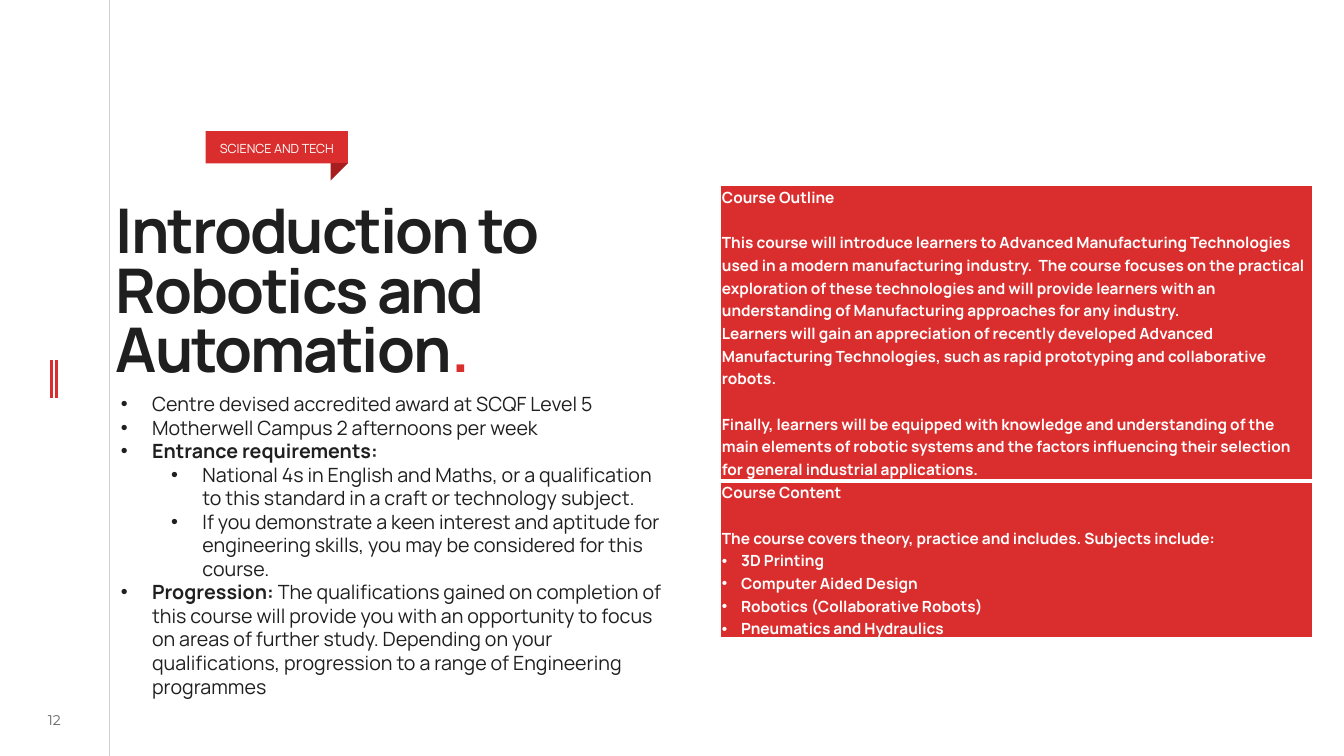
from dataclasses import dataclass

from lxml.etree import SubElement
from pptx import Presentation
from pptx.dml.color import RGBColor
from pptx.enum.shapes import MSO_CONNECTOR, MSO_SHAPE
from pptx.enum.text import MSO_ANCHOR, MSO_AUTO_SIZE, PP_ALIGN
from pptx.oxml import parse_xml
from pptx.oxml.ns import nsdecls, qn
from pptx.util import Inches, Pt

COLORS = {"ink": "1F1F1F", "red": "DA2E2E", "dot": "DB2E2E", "fold": "A81E1E",
          "white": "FFFFFF", "rule": "D2D2D2", "number": "626262"}
FONT = "Manrope"


@dataclass
class Span:
    text: str
    bold: bool = False


@dataclass
class Para:
    spans: list[Span]
    indent: float = 0
    hanging: float = 0
    gap: float = 0


@dataclass
class Rule:
    x: float
    top: float
    bottom: float
    color: str
    width: float


RULES = [Rule(1.08, 0, 7.5, "rule", 0.5),
         Rule(0.51, 3.57, 3.95, "red", 2),
         Rule(0.56, 3.57, 3.95, "red", 2)]


def bullet(*spans: Span, indent: float = 0.31, hanging: float = 0.31) -> Para:
    return Para(list(spans), indent, hanging)


def topic(text: str) -> Para:
    return bullet(Span(text, True), indent=0.19, hanging=0.19)


def plain(text: str, gap: float = 0) -> Para:
    return Para([Span(text, True)], gap=gap)


DETAILS = [
    bullet(Span("Centre devised accredited award at SCQF Level 5")),
    bullet(Span("Motherwell Campus 2 afternoons per week")),
    bullet(Span("Entrance requirements:", True)),
    bullet(Span("National 4s in English and Maths, or a qualification to this standard "
                "in a craft or technology subject."), indent=0.81),
    bullet(Span("If you demonstrate a keen interest and aptitude for engineering skills, "
                "you may be considered for this course."), indent=0.81),
    bullet(Span("Progression: ", True),
           Span("The qualifications gained on completion of this course will provide you "
                "with an opportunity to focus on areas of further study. Depending on your "
                "qualifications, progression to a range of Engineering programmes")),
]
LINE_GAP = 16.2
COURSE = [
    [plain("Course Outline"),
     plain("This course will introduce learners to Advanced Manufacturing Technologies used "
           "in a modern manufacturing industry.  The course focuses on the practical "
           "exploration of these technologies and will provide learners with an "
           "understanding of Manufacturing approaches for any industry.", LINE_GAP),
     plain("Learners will gain an appreciation of recently developed Advanced Manufacturing "
           "Technologies, such as rapid prototyping and collaborative robots."),
     plain("Finally, learners will be equipped with knowledge and understanding of the main "
           "elements of robotic systems and the factors influencing their selection for "
           "general industrial applications.", LINE_GAP)],
    [plain("Course Content"),
     plain("The course covers theory, practice and includes. Subjects include:", LINE_GAP),
     topic("3D Printing"),
     topic("Computer Aided Design"),
     topic("Robotics (Collaborative Robots)"),
     topic("Pneumatics and Hydraulics")],
]
ROW_HEIGHTS = [2.93, 1.56]


def rgb(name: str) -> RGBColor:
    return RGBColor.from_string(COLORS[name])


def add_span(para, text: str, *, size: float, color: str = "ink", bold: bool = False,
             font: str = FONT, tracking: float = 0) -> None:
    span = para.add_run()
    span.text = text
    span.font.name, span.font.size, span.font.bold = font, Pt(size), bold
    span.font.color.rgb = rgb(color)
    if tracking:
        span.font._element.set("spc", str(round(tracking * 100)))


def set_frame(frame, left: float = 0, top: float = 0, right: float = 0, bottom: float = 0,
              anchor=MSO_ANCHOR.TOP) -> None:
    frame.word_wrap = True
    frame.vertical_anchor = anchor
    frame.margin_left, frame.margin_top = Inches(left), Inches(top)
    frame.margin_right, frame.margin_bottom = Inches(right), Inches(bottom)


def write_paras(frame, paras: list[Para], *, size: float, color: str, spacing: float) -> None:
    for index, item in enumerate(paras):
        para = frame.paragraphs[0] if index == 0 else frame.add_paragraph()
        para.line_spacing = spacing
        para.space_before = Pt(item.gap)
        if item.hanging:
            props = para._p.get_or_add_pPr()
            props.set("marL", str(Inches(item.indent)))
            props.set("indent", str(-Inches(item.hanging)))
            SubElement(props, qn("a:buFont")).set("typeface", "Arial")
            SubElement(props, qn("a:buChar")).set("char", "•")
        for span in item.spans:
            add_span(para, span.text, size=size, color=color, bold=span.bold)


def add_rule(page, rule: Rule) -> None:
    line = page.shapes.add_connector(MSO_CONNECTOR.STRAIGHT, Inches(rule.x), Inches(rule.top),
                                     Inches(rule.x), Inches(rule.bottom))
    line.line.color.rgb = rgb(rule.color)
    line.line.width = Pt(rule.width)
    SubElement(line._element.spPr, qn("a:effectLst"))


def add_block(page, kind, left: float, top: float, width: float, height: float, color: str):
    block = page.shapes.add_shape(kind, Inches(left), Inches(top), Inches(width), Inches(height))
    block.shadow.inherit = False
    block.fill.solid()
    block.fill.fore_color.rgb = rgb(color)
    block.line.fill.background()
    return block


def set_borders(cell, **widths: float) -> None:
    props = cell._tc.get_or_add_tcPr()
    for index, (side, width) in enumerate(widths.items()):
        props.insert(index, parse_xml(
            f'<a:{side} {nsdecls("a")} w="{Pt(width)}"><a:solidFill>'
            f'<a:srgbClr val="{COLORS["white"]}"/></a:solidFill></a:{side}>'))


def add_course_table(page) -> None:
    table = page.shapes.add_table(len(COURSE), 1, Inches(7.14), Inches(1.84), Inches(5.88),
                                  Inches(sum(ROW_HEIGHTS))).table
    for row, paras, height, bottom in zip(table.rows, COURSE, ROW_HEIGHTS, (3, 1)):
        row.height = Inches(height)
        cell = row.cells[0]
        cell.fill.solid()
        cell.fill.fore_color.rgb = rgb("red")
        cell.margin_left = cell.margin_right = Inches(0.02)
        cell.margin_top = cell.margin_bottom = 0
        set_borders(cell, lnL=1, lnR=1, lnT=4 - bottom, lnB=bottom)
        write_paras(cell.text_frame, paras, size=11, color="white", spacing=1.07)


def main() -> None:
    deck = Presentation()
    deck.slide_width, deck.slide_height = Inches(13.33), Inches(7.5)
    page = deck.slides.add_slide(deck.slide_layouts[5])

    # Margin rules and page number
    for rule in RULES:
        add_rule(page, rule)
    number = page.shapes.add_textbox(Inches(0.26), Inches(7.02), Inches(0.56), Inches(0.25))
    set_frame(number.text_frame, anchor=MSO_ANCHOR.MIDDLE)
    para = number.text_frame.paragraphs[0]
    para.alignment = PP_ALIGN.CENTER
    add_span(para, "12", size=10, color="number", font="Montserrat")

    # Title
    title = page.shapes.title
    title.left, title.top, title.width, title.height = map(Inches, (1.15, 1.84, 6.43, 1.77))
    set_frame(title.text_frame, top=0.21)
    title.text_frame.auto_size = MSO_AUTO_SIZE.NONE
    para = title.text_frame.paragraphs[0]
    para.alignment, para.line_spacing = PP_ALIGN.LEFT, 0.8
    for text, color in (("Introduction to Robotics and Automation", "ink"), (".", "dot")):
        add_span(para, text, size=44, color=color, bold=True, tracking=-1.5)

    # Folded subject tag
    tag = add_block(page, MSO_SHAPE.RECTANGLE, 2.04, 1.3, 1.41, 0.32, "red")
    set_frame(tag.text_frame, top=0.07, bottom=0.05, anchor=MSO_ANCHOR.MIDDLE)
    para = tag.text_frame.paragraphs[0]
    para.alignment = PP_ALIGN.CENTER
    add_span(para, "SCIENCE AND TECH", size=9, color="white")
    fold = add_block(page, MSO_SHAPE.RIGHT_TRIANGLE, 3.28, 1.62, 0.17, 0.17, "fold")
    fold._element.spPr.find(qn("a:xfrm")).set("flipV", "1")

    # Course details
    details = page.shapes.add_textbox(Inches(1.1), Inches(3.84), Inches(5.6), Inches(4.11))
    set_frame(details.text_frame, 0.1, 0.05, 0.1, 0.05)
    details.text_frame.auto_size = MSO_AUTO_SIZE.SHAPE_TO_FIT_TEXT
    write_paras(details.text_frame, DETAILS, size=14, color="ink", spacing=1)

    # Course outline and content
    add_course_table(page)
    deck.save("out.pptx")


if __name__ == "__main__":
    main()
